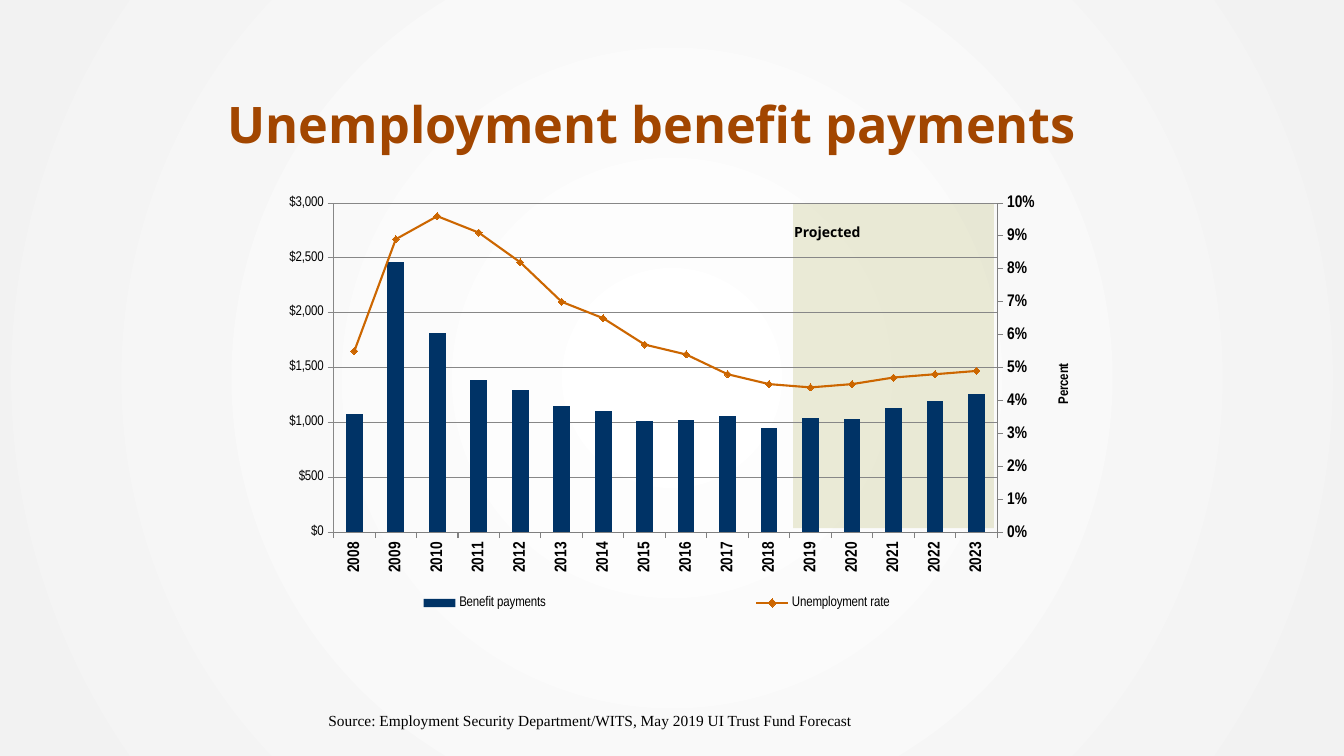
from copy import deepcopy

from pptx import Presentation
from pptx import util as u
from pptx.chart.axis import ValueAxis
from pptx.chart.data import CategoryChartData
from pptx.dml.color import RGBColor
from pptx.enum import chart as kinds, shapes, text
from pptx.oxml import parse_xml
from pptx.oxml.ns import nsdecls, qn

BLACK, GRAY, NAVY, ORANGE = "000000", "808080", "003366", "CC6600"
YEARS = [str(year) for year in range(2008, 2024)]
PAYMENTS = [1080, 2460, 1820, 1390, 1300, 1150, 1100, 1010,
            1020, 1060, 950, 1040, 1030, 1130, 1200, 1260]
RATES = [0.055, 0.089, 0.096, 0.091, 0.082, 0.07, 0.065, 0.057,
         0.054, 0.048, 0.045, 0.044, 0.045, 0.047, 0.048, 0.049]


def color(code):
    """Turn a hex string into a color."""
    return RGBColor.from_string(code)


def paint(fill, code):
    """Give a fill one solid color."""
    fill.solid()
    fill.fore_color.rgb = color(code)


def style(font, name, size, code=BLACK, bold=False):
    """Set the look of a font."""
    font.name, font.size, font.bold = name, u.Pt(size), bold
    font.color.rgb = color(code)


def set_background(page):
    """Fill the page with a gradient spreading from its center."""
    fill = page.background.fill
    fill.gradient()
    stops = fill.gradient_stops
    stops[0].color.rgb, stops[1].color.rgb = color("FFFFFF"), color("F2F2F2")
    stops[0].position, stops[1].position = 0, 1
    gradient = page.background._cSld.find(".//" + qn("a:gradFill"))
    gradient.replace(gradient.find(qn("a:lin")), parse_xml(
        f'<a:path {nsdecls("a")} path="circle">'
        '<a:fillToRect l="50000" t="50000" r="50000" b="50000"/></a:path>'))


def set_title(page, words):
    """Move, fill and format the title."""
    title = page.shapes.title
    title.left, title.top = u.Pt(155.5), u.Pt(50.4)
    title.width, title.height = u.Pt(633.6), u.Pt(80.6)
    frame = title.text_frame
    frame.text = words
    frame.vertical_anchor = text.MSO_ANCHOR.MIDDLE
    para = frame.paragraphs[0]
    para.alignment, para.line_spacing = text.PP_ALIGN.LEFT, 0.9
    style(para.runs[0].font, "Open Sans", 36, "A24600", True)


def add_label(page, words, place, name, size, bold=False):
    """Add a one-line text box."""
    box = page.shapes.add_textbox(*map(u.Pt, place))
    box.text_frame.word_wrap = True
    box.text_frame.text = words
    style(box.text_frame.paragraphs[0].runs[0].font, name, size, bold=bold)


def add_shade(page, place, code, opacity):
    """Add a translucent rectangle."""
    shade = page.shapes.add_shape(
        shapes.MSO_SHAPE.RECTANGLE, *map(u.Pt, place))
    shade.shadow.inherit = False
    shade.line.fill.background()
    paint(shade.fill, code)
    shade.fill._xPr.find(".//" + qn("a:srgbClr")).append(
        parse_xml(f'<a:alpha {nsdecls("a")} val="{opacity * 1000}"/>'))


def set_layout(element, index, left, top, width=None, height=None, inner=False):
    """Give a chart part a fixed place in fractions of the chart."""
    for old in element.findall(qn("c:layout")):
        element.remove(old)
    items = [("layoutTarget", "inner")] if inner else []
    items += [("xMode", "edge"), ("yMode", "edge"), ("x", left), ("y", top)]
    if width:
        items += [("w", width), ("h", height)]
    body = "".join(f'<c:{tag} val="{value}"/>' for tag, value in items)
    element.insert(index, parse_xml(
        f'<c:layout {nsdecls("c")}><c:manualLayout>{body}'
        '</c:manualLayout></c:layout>'))


def split_rate_line(chart):
    """Move the second series to a line on its own axes; return its value axis."""
    area = chart._chartSpace.find(".//" + qn("c:plotArea"))
    bars = area.find(qn("c:barChart"))
    series = bars.findall(qn("c:ser"))[1]
    for extra in series.findall(qn("c:invertIfNegative")):
        series.remove(extra)
    line = parse_xml(
        f'<c:lineChart {nsdecls("c")}><c:grouping val="standard"/>'
        '<c:varyColors val="0"/><c:marker val="1"/>'
        '<c:axId val="501"/><c:axId val="502"/></c:lineChart>')
    line.insert(2, series)
    bars.addnext(line)
    category, value = (deepcopy(area.find(qn(tag)))
                       for tag in ("c:catAx", "c:valAx"))
    changes = ((category, {"axId": "501", "crossAx": "502", "delete": "1"}),
               (value, {"axId": "502", "crossAx": "501", "axPos": "r",
                        "crosses": "max"}))
    for axis, values in changes:
        for tag, setting in values.items():
            axis.find(qn(f"c:{tag}")).set("val", setting)
    area.find(qn("c:valAx")).addnext(value)
    value.addnext(category)
    set_layout(area, 0, 0.132, 0.056, 0.756, 0.718, inner=True)
    return ValueAxis(value)


def format_axis(axis):
    """Set the line, ticks and labels of an axis."""
    axis.format.line.color.rgb = color(GRAY)
    axis.format.line.width = u.Pt(0.75)
    axis.major_tick_mark = kinds.XL_TICK_MARK.OUTSIDE
    axis.minor_tick_mark = kinds.XL_TICK_MARK.NONE
    style(axis.tick_labels.font, "Arial Narrow", 12, bold=True)


def format_value_axis(axis, words, top, step, pattern, place):
    """Set the scale, number format and upright title of a value axis."""
    format_axis(axis)
    axis.minimum_scale, axis.maximum_scale, axis.major_unit = 0, top, step
    axis.tick_labels.number_format = pattern
    axis.tick_labels.number_format_is_linked = False
    frame = axis.axis_title.text_frame
    frame.text = words
    frame._txBody.bodyPr.set("rot", "-5400000")
    frame._txBody.bodyPr.set("vert", "horz")
    style(frame.paragraphs[0].runs[0].font, "Arial Narrow", 10, bold=True)
    set_layout(axis.axis_title._element, 1, *place)


def add_payments_chart(page, place):
    """Add columns of payments with a line of the unemployment rate."""
    data = CategoryChartData()
    data.categories = YEARS
    data.add_series("Benefit payments", PAYMENTS, '"$"#,##0')
    data.add_series("Unemployment rate", RATES, "0.0%")
    chart = page.shapes.add_chart(
        kinds.XL_CHART_TYPE.COLUMN_CLUSTERED, *map(u.Pt, place), data).chart
    chart.has_title = False
    style(chart.font, "Arial Narrow", 10)
    right_axis = split_rate_line(chart)
    format_axis(chart.category_axis)
    labels = chart.category_axis._element.find(qn("c:txPr"))
    labels.find(qn("a:bodyPr")).set("rot", "-5400000")
    left_axis = chart.value_axis
    format_value_axis(left_axis, "In millions", 3000, 500, '"$"#,##0',
                      (0.005, 0.297))
    format_value_axis(right_axis, "Percent", 0.1, 0.01, "0%", (0.953, 0.4))
    left_axis.major_gridlines.format.line.color.rgb = color(GRAY)
    right_axis.has_major_gridlines = False

    columns, lines = chart.plots
    columns.gap_width, columns.vary_by_categories = 150, False
    paint(columns.series[0].format.fill, NAVY)
    rate = lines.series[0]
    rate.smooth = False
    rate.format.line.color.rgb = color(ORANGE)
    rate.format.line.width = u.Pt(1.5)
    rate.marker.style, rate.marker.size = kinds.XL_MARKER_STYLE.DIAMOND, 5
    paint(rate.marker.format.fill, ORANGE)
    rate.marker.format.line.color.rgb = color(ORANGE)

    chart.has_legend = True
    chart.legend.position = kinds.XL_LEGEND_POSITION.BOTTOM
    chart.legend.include_in_layout = False
    style(chart.legend.font, "Arial Narrow", 10)
    set_layout(chart.legend._element, 1, 0, 0.89, 1, 0.076)


def main():
    """Build and save the slide."""
    deck = Presentation()
    deck.slide_width, deck.slide_height = u.Pt(960), u.Pt(540)
    page = deck.slides.add_slide(deck.slide_layouts[5])
    set_background(page)
    set_title(page, "Unemployment benefit payments")
    add_label(page, "Source: Employment Security Department/WITS, "
              "May 2019 UI Trust Fund Forecast",
              (227.5, 504.7, 489, 21), "Times New Roman", 11)
    add_shade(page, (566.6, 145.4, 143.3, 231.8), "CCCC99", 38)
    add_label(page, "Projected", (560.2, 156.2, 67, 25.2),
              "Open Sans", 10, True)
    add_payments_chart(page, (155.5, 126.7, 627.1, 327.6))
    deck.save("out.pptx")


if __name__ == "__main__":
    main()
